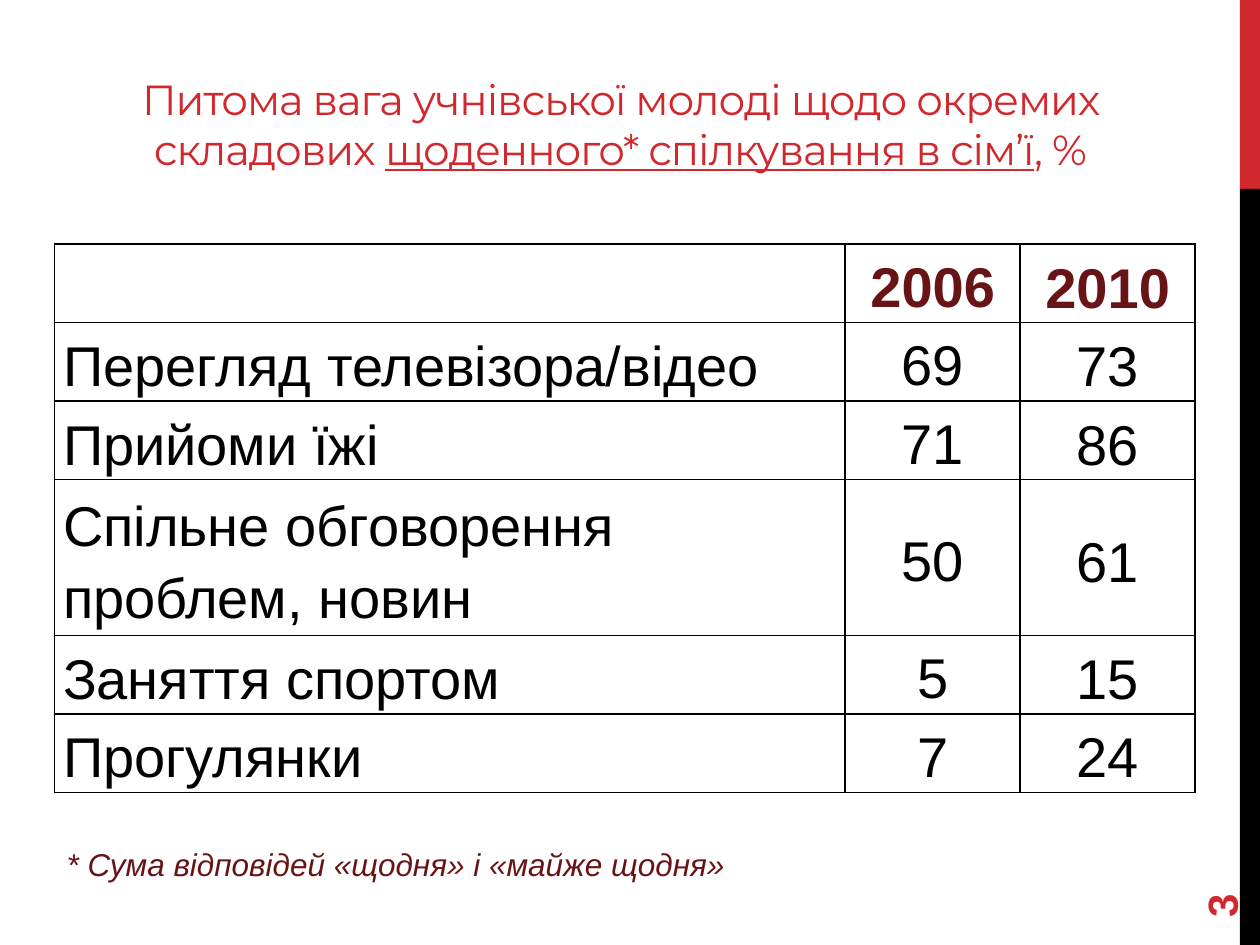
from lxml import etree
from pptx import Presentation
from pptx.dml.color import RGBColor
from pptx.enum import shapes, text
from pptx.oxml.ns import qn
from pptx.util import Pt

RED, MAROON, BLACK, WHITE = "D1282E", "681417", "000000", "FFFFFF"
CENTER, LEFT = text.PP_ALIGN.CENTER, text.PP_ALIGN.LEFT
MIDDLE = text.MSO_ANCHOR.MIDDLE

HEADINGS = ("", "2006", "2010")
ACTIVITIES = [
    ("Перегляд телевізора/відео", "69", "73"),
    ("Прийоми їжі", "71", "86"),
    ("Спільне обговорення проблем, новин", "50", "61"),
    ("Заняття спортом", "5", "15"),
    ("Прогулянки", "7", "24"),
]


def rgb(color):
    return RGBColor.from_string(color)


def set_all(target, formats):
    for name, value in formats.items():
        setattr(target, name, value)


def add_run(paragraph, wording, size, color, font="Arial", **formats):
    run = paragraph.add_run()
    run.text = wording
    set_all(run.font, dict(name=font, size=Pt(size), **formats))
    run.font.color.rgb = rgb(color)
    return run


def add_label(slide, box, **formats):
    label = slide.shapes.add_textbox(*map(Pt, box))
    set_all(label.text_frame, dict(word_wrap=True, **formats))
    return label


def add_side_band(slide, box):
    left, top, width, height = box
    red_height = height / 5
    for y, part_height, color in ((top, red_height, RED),
                                  (top + red_height, height - red_height, BLACK)):
        band = slide.shapes.add_shape(shapes.MSO_SHAPE.RECTANGLE,
                                      Pt(left), Pt(y), Pt(width), Pt(part_height))
        band.shadow.inherit = False
        band.fill.solid()
        band.fill.fore_color.rgb = rgb(color)
        band.line.fill.background()


def add_title(slide, box):
    title = add_label(slide, box, vertical_anchor=text.MSO_ANCHOR.BOTTOM)
    paragraph = title.text_frame.paragraphs[0]
    paragraph.alignment = CENTER
    for wording, underlined in (
            ("Питома вага учнівської молоді щодо окремих складових ", False),
            ("щоденного* спілкування в сім’ї", True),
            (", %", False)):
        run = add_run(paragraph, wording, 24, RED, "Montserrat", underline=underlined)
        run.font._element.set("spc", "-60")


def add_borders(cell):
    properties = cell._tc.get_or_add_tcPr()
    for place, side in enumerate(("a:lnL", "a:lnR", "a:lnT", "a:lnB")):
        border = etree.Element(qn(side), w=str(Pt(1)))
        fill = etree.SubElement(border, qn("a:solidFill"))
        etree.SubElement(fill, qn("a:srgbClr"), val=BLACK)
        properties.insert(place, border)


def fill_cell(cell, wording, is_heading, column):
    cell.fill.solid()
    cell.fill.fore_color.rgb = rgb(WHITE)
    add_borders(cell)
    side, top = (0, 0) if column == 1 else (5, 0.7)
    set_all(cell, dict(vertical_anchor=MIDDLE, margin_left=Pt(side),
                       margin_right=Pt(side), margin_top=Pt(top), margin_bottom=0))
    paragraph = cell.text_frame.paragraphs[0]
    set_all(paragraph, dict(alignment=CENTER if column else LEFT, line_spacing=1.15))
    if wording:
        add_run(paragraph, wording, 32, MAROON if is_heading else BLACK, bold=is_heading)


def add_activity_table(slide, box):
    left, top, width, height = box
    rows = [HEADINGS] + ACTIVITIES
    table = slide.shapes.add_table(len(rows), len(HEADINGS), *map(Pt, box)).table
    year_width = 100
    for column, part in enumerate((width - 2 * year_width, year_width, year_width)):
        table.columns[column].width = Pt(part)
    # The long activity takes two lines, every other row takes one
    line_height = height / (len(rows) + 1)
    for r, row in enumerate(rows):
        table.rows[r].height = Pt(line_height * (2 if len(row[0]) > 30 else 1))
        for c, wording in enumerate(row):
            fill_cell(table.cell(r, c), wording, r == 0, c)


def add_footnote(slide, box):
    footnote = add_label(slide, box)
    add_run(footnote.text_frame.paragraphs[0],
            "* Сума відповідей «щодня» і «майже щодня»", 18, MAROON, italic=True)


def add_page_number(slide, box):
    number = add_label(slide, box, vertical_anchor=MIDDLE)
    number.rotation = 270
    add_run(number.text_frame.paragraphs[0], "3", 24, RED, bold=True)


def main():
    deck = Presentation()
    set_all(deck, dict(slide_width=Pt(720), slide_height=Pt(540)))
    slide = deck.slides.add_slide(deck.slide_layouts[6])
    add_side_band(slide, (708.5, 0, 11.5, 540))
    add_title(slide, (20, 37.5, 669, 65.5))
    add_activity_table(slide, (31, 139.5, 652, 293))
    add_footnote(slide, (31, 479.5, 595.5, 29))
    add_page_number(slide, (646, 465, 103.5, 29))
    deck.save("out.pptx")


if __name__ == "__main__":
    main()
